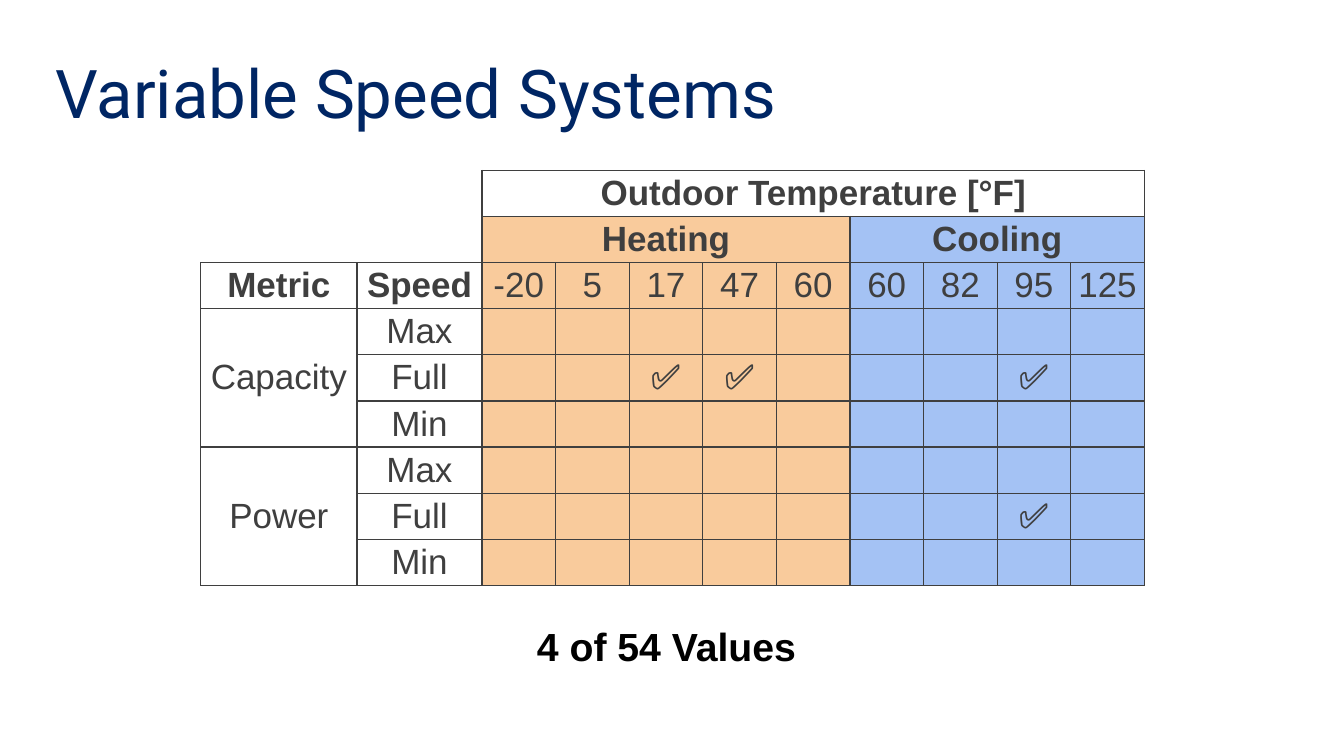
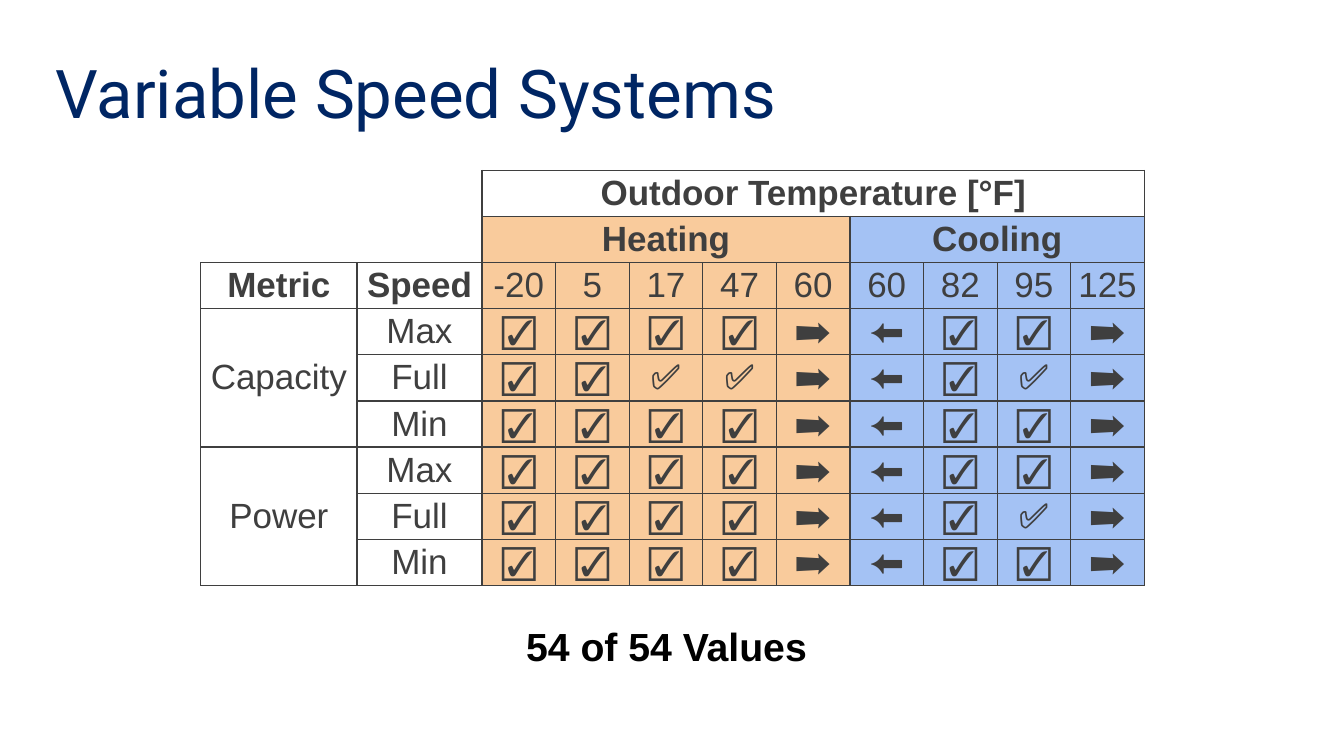
from lxml.etree import SubElement
from pptx import Presentation
from pptx.dml.color import RGBColor
from pptx.enum.text import MSO_ANCHOR, PP_ALIGN
from pptx.oxml.ns import qn
from pptx.util import Inches, Pt

COLORS = {
    "title": "002664",
    "table": "3F3F3F",
    "heating": "F9CB9C",
    "cooling": "A4C2F4",
    "caption": "000000",
}
TITLE = "Variable Speed Systems"
METRICS = ["Capacity", "Power"]
SPEEDS = ["Max", "Full", "Min"]
HEATING = ["-20", "5", "17", "47", "60"]
COOLING = ["60", "82", "95", "125"]
TEMPERATURES = HEATING + COOLING
HEADER_ROWS = 3
LABEL_COLUMNS = 2
COOLING_START = LABEL_COLUMNS + len(HEATING)
ROW_COUNT = HEADER_ROWS + len(METRICS) * len(SPEEDS)
LABEL_WIDTHS = [1.55, 1.24]
VALUE_WIDTH = 0.73
TABLE_LEFT, TABLE_TOP, TABLE_WIDTH, TABLE_HEIGHT = 1.99, 1.69, 9.35, 4.12
CAPTION_CENTER = 6.61
MEASURED = {("Capacity", "Full"): {2, 3, 7}, ("Power", "Full"): {7}}
NO_ESTIMATES = [""] * len(TEMPERATURES)
ESTIMATES = ["☑️"] * 4 + ["➡️", "⬅️", "☑️", "☑️", "➡️"]


def write_text(frame, text, *, size, color, font="Arial", bold=False, align=PP_ALIGN.CENTER):
    """Write one formatted line into a text frame."""
    para = frame.paragraphs[0]
    para.alignment = align
    span = para.add_run()
    span.text = text
    span.font.name = font
    span.font.size = Pt(size)
    span.font.bold = bold
    span.font.color.rgb = RGBColor.from_string(COLORS[color])


def add_title(page, text):
    """Place and fill the title placeholder."""
    title = page.shapes.title
    title.left, title.top = Inches(0.45), Inches(0.45)
    title.width, title.height = Inches(12.42), Inches(0.91)
    write_text(title.text_frame, text, size=48, color="title", font="Roboto", align=PP_ALIGN.LEFT)


def add_caption(page, text, width):
    """Add the bold count centred below the table."""
    box = page.shapes.add_textbox(
        Inches(CAPTION_CENTER - width / 2), Inches(6.12), Inches(width), Inches(0.57)
    )
    box.text_frame.word_wrap = False
    write_text(box.text_frame, text, size=28, color="caption", bold=True)


def set_borders(cell, edges):
    """Draw thin lines on the given edges of a cell."""
    properties = cell._tc.get_or_add_tcPr()
    for edge in edges:
        line = SubElement(properties, qn(f"a:ln{edge}"), w=str(Pt(1)))
        fill = SubElement(line, qn("a:solidFill"))
        SubElement(fill, qn("a:srgbClr"), val=COLORS["table"])


def cell_edges(row, column):
    """Return the ruled edges, leaving the top left corner open."""
    if row >= HEADER_ROWS - 1 or column >= LABEL_COLUMNS:
        return "LRTB"
    right = "R" if column == LABEL_COLUMNS - 1 else ""
    bottom = "B" if row == HEADER_ROWS - 2 else ""
    return right + bottom


def cell_color(row, column):
    """Return the name of the fill of a cell, or None for no fill."""
    if row == 0 or column < LABEL_COLUMNS:
        return None
    return "heating" if column < COOLING_START else "cooling"


def style_cell(cell, row, column):
    """Set the margins, borders and fill of a cell."""
    cell.margin_left = cell.margin_right = Inches(0.03)
    cell.margin_top = cell.margin_bottom = Inches(0.02)
    cell.vertical_anchor = MSO_ANCHOR.MIDDLE
    set_borders(cell, cell_edges(row, column))
    color = cell_color(row, column)
    if color:
        cell.fill.solid()
        cell.fill.fore_color.rgb = RGBColor.from_string(COLORS[color])
    else:
        cell.fill.background()


def table_rows(estimates):
    """Return the cell texts, with measured points over the estimates."""
    gap = [""] * LABEL_COLUMNS
    rows = [
        gap + ["Outdoor Temperature [°F]"] + [""] * (len(TEMPERATURES) - 1),
        gap + ["Heating"] + [""] * (len(HEATING) - 1)
        + ["Cooling"] + [""] * (len(COOLING) - 1),
        ["Metric", "Speed"] + TEMPERATURES,
    ]
    for metric in METRICS:
        for speed in SPEEDS:
            measured = MEASURED.get((metric, speed), set())
            marks = ["✅" if index in measured else mark for index, mark in enumerate(estimates)]
            label = metric if speed == SPEEDS[0] else ""
            rows.append([label, speed] + marks)
    return rows


def merge_cells(table):
    """Join the header bands and the metric labels."""
    last = LABEL_COLUMNS + len(TEMPERATURES) - 1
    table.cell(0, LABEL_COLUMNS).merge(table.cell(0, last))
    table.cell(1, LABEL_COLUMNS).merge(table.cell(1, COOLING_START - 1))
    table.cell(1, COOLING_START).merge(table.cell(1, last))
    for top in range(HEADER_ROWS, ROW_COUNT, len(SPEEDS)):
        table.cell(top, 0).merge(table.cell(top + len(SPEEDS) - 1, 0))


def add_values_table(page, estimates):
    """Add the table of metrics by speed and outdoor temperature."""
    widths = LABEL_WIDTHS + [VALUE_WIDTH] * len(TEMPERATURES)
    table = page.shapes.add_table(
        ROW_COUNT, len(widths), Inches(TABLE_LEFT), Inches(TABLE_TOP),
        Inches(TABLE_WIDTH), Inches(TABLE_HEIGHT),
    ).table
    table.first_row = table.horz_banding = False
    for column, width in zip(table.columns, widths):
        column.width = Inches(width)
    for row in table.rows:
        row.height = Inches(TABLE_HEIGHT / ROW_COUNT)
    for row, texts in enumerate(table_rows(estimates)):
        for column, text in enumerate(texts):
            cell = table.cell(row, column)
            style_cell(cell, row, column)
            if text:
                heading = row < HEADER_ROWS - 1 or text in ("Metric", "Speed")
                write_text(cell.text_frame, text, size=25, color="table", bold=heading)
    merge_cells(table)


def add_page(deck, estimates, caption, caption_width):
    """Add one slide with title, table and caption."""
    page = deck.slides.add_slide(deck.slide_layouts[5])
    add_title(page, TITLE)
    add_values_table(page, estimates)
    add_caption(page, caption, caption_width)


def main():
    """Build and save the deck."""
    deck = Presentation()
    deck.slide_width, deck.slide_height = Inches(13.33), Inches(7.5)
    add_page(deck, NO_ESTIMATES, "4 of 54 Values", 2.82)
    add_page(deck, ESTIMATES, "54 of 54 Values", 3.04)
    deck.save("out.pptx")


if __name__ == "__main__":
    main()
